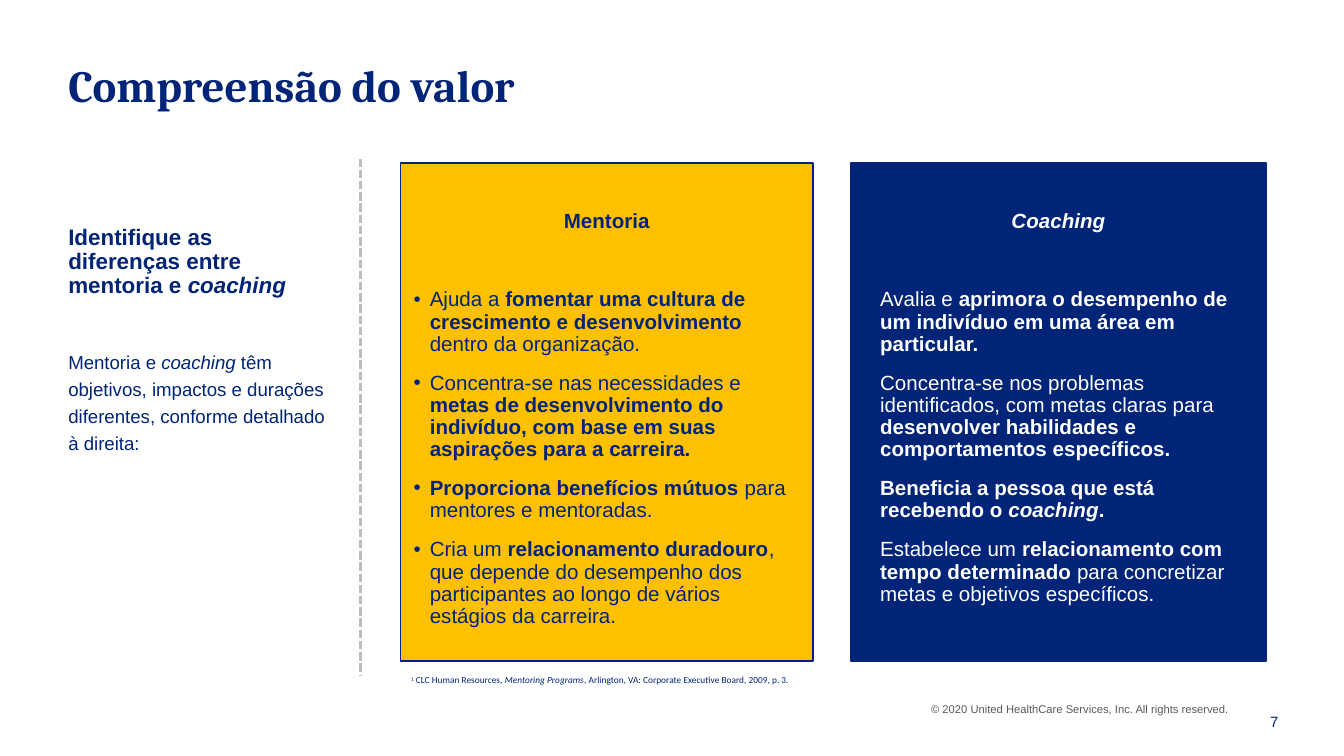
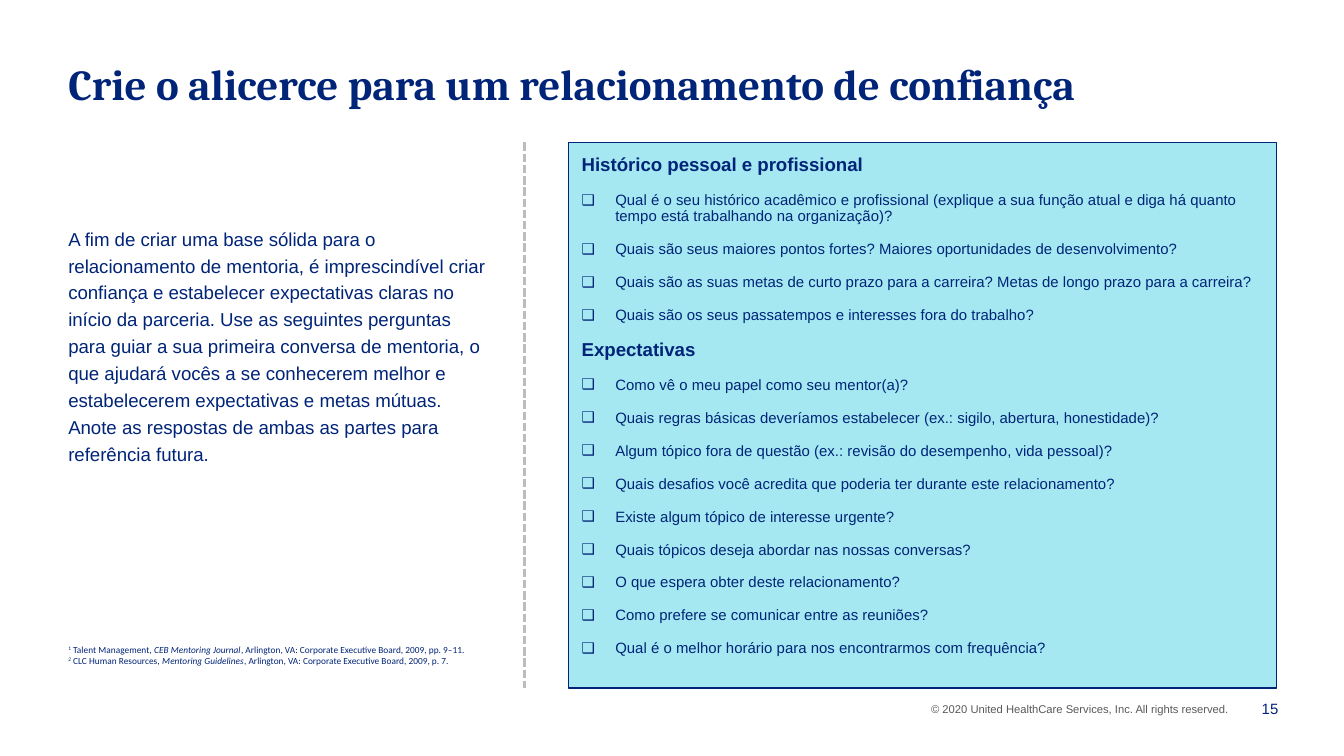
from dataclasses import dataclass

from lxml.etree import SubElement
from pptx import Presentation
from pptx.dml.color import RGBColor
from pptx.enum.dml import MSO_LINE
from pptx.enum.shapes import MSO_CONNECTOR, MSO_SHAPE
from pptx.enum.text import MSO_ANCHOR, MSO_AUTO_SIZE, PP_ALIGN
from pptx.oxml.ns import qn
from pptx.util import Inches, Pt


@dataclass(frozen=True)
class Theme:
    navy: str = "002477"
    gold: str = "FFC000"
    aqua: str = "A5E8F1"
    white: str = "FFFFFF"
    gray: str = "595959"
    divider: str = "BDBDBD"
    title_font: str = "Cambria"
    body_font: str = "Arial"
    note_font: str = "Calibri"
    lead_size: int = 12
    card_size: int = 11
    body_size: int = 10
    small_size: int = 8
    copyright_size: int = 6
    note_size: int = 5


theme = Theme()


def add_box(page, place, insets=(0.1, 0.05, 0.1, 0.05), fill=None, line_width=1, grow=False):
    """Add a text box, or an outlined rectangle when a fill is given."""
    place = [Inches(value) for value in place]
    if fill:
        box = page.shapes.add_shape(MSO_SHAPE.RECTANGLE, *place)
        box.shadow.inherit = False
        box.fill.solid()
        box.fill.fore_color.rgb = RGBColor.from_string(fill)
        box.line.color.rgb = RGBColor.from_string(theme.navy)
        box.line.width = Pt(line_width)
    else:
        box = page.shapes.add_textbox(*place)
    frame = box.text_frame
    frame.word_wrap = True
    frame.auto_size = MSO_AUTO_SIZE.SHAPE_TO_FIT_TEXT if grow else MSO_AUTO_SIZE.NONE
    frame.vertical_anchor = MSO_ANCHOR.TOP
    (frame.margin_left, frame.margin_top,
     frame.margin_right, frame.margin_bottom) = [Inches(value) for value in insets]
    return frame


def write(frame, spans, size, color=theme.navy, font=theme.body_font, align=PP_ALIGN.LEFT,
          spacing=1.0, before=0, after=0, indent=0, bullet=None):
    """Add a paragraph of (text, style) spans; style letters: b bold, i italic, s superscript."""
    first = not frame.paragraphs[0].runs
    para = frame.paragraphs[0] if first else frame.add_paragraph()
    if indent:
        properties = para._p.get_or_add_pPr()
        properties.set("marL", str(Inches(indent)))
        if bullet:
            properties.set("indent", str(-Inches(indent)))
            bullet_color = SubElement(properties, qn("a:buClr"))
            SubElement(bullet_color, qn("a:srgbClr")).set("val", color)
            SubElement(properties, qn("a:buFont")).set("typeface", font)
            SubElement(properties, qn("a:buChar")).set("char", bullet)
    para.alignment = align
    para.line_spacing = spacing
    para.space_before = Pt(0 if first else before)
    para.space_after = Pt(after)
    for text, style in spans:
        span = para.add_run()
        span.text = text
        span.font.name = font
        span.font.size = Pt(size)
        span.font.color.rgb = RGBColor.from_string(color)
        span.font.bold = "b" in style
        span.font.italic = "i" in style
        if "s" in style:
            span.font._element.set("baseline", "30000")


deck = Presentation()
deck.slide_width = Inches(10)
deck.slide_height = deck.slide_width * 9 // 16

# Title, title size, number, number top, divider (x, top, bottom), note place, notes
page_specs = [
    ("Compreensão do valor", 24, "7", 5.21, (2.68, 1.18, 5.02), (2.96, 5.02, 6.55, 0.08),
     [("1", " CLC Human Resources, ", "Mentoring Programs",
       ", Arlington, VA: Corporate Executive Board, 2009, p. 3.")]),
    ("Crie o alicerce para um relacionamento de confiança", 23, "15", 5.12,
     (3.9, 1.06, 5.12), (0.41, 4.79, 4.32, 0.17),
     [("1", " Talent Management, ", "CEB Mentoring Journal",
       ", Arlington, VA: Corporate Executive Board, 2009, pp. 9–11."),
      ("2", " CLC Human Resources, ", "Mentoring Guidelines",
       ", Arlington, VA: Corporate Executive Board, 2009, p. 7.")]),
]

pages = []
for title, title_size, number, number_top, (x, top, bottom), note_place, notes in page_specs:
    page = deck.slides.add_slide(deck.slide_layouts[6])
    pages.append(page)

    write(add_box(page, (6.83, 5.18, 2.58, 0.2), grow=True),
          [("© 2020 United HealthCare Services, Inc. All rights reserved.", "")],
          theme.copyright_size, theme.gray)
    write(add_box(page, (0.41, 0.38, 9.1, 0.6)), [(title, "b")], title_size,
          font=theme.title_font)
    number_frame = add_box(page, (9.22, number_top, 0.39, 0.31))
    number_frame.vertical_anchor = MSO_ANCHOR.MIDDLE
    write(number_frame, [(number, "")], theme.small_size, align=PP_ALIGN.RIGHT)

    divider = page.shapes.add_connector(
        MSO_CONNECTOR.STRAIGHT, Inches(x), Inches(top), Inches(x), Inches(bottom))
    divider.line.color.rgb = RGBColor.from_string(theme.divider)
    divider.line.width = Pt(1.5)
    divider.line.dash_style = MSO_LINE.SQUARE_DOT
    SubElement(divider._element.spPr, qn("a:effectLst"))

    note_frame = add_box(page, note_place, (0.1, 0, 0.1, 0), grow=True)
    for mark, author, work, publisher in notes:
        write(note_frame, [(mark, "s"), (author, ""), (work, "i"), (publisher, "")],
              theme.note_size, font=theme.note_font)

value_page, trust_page = pages

# Mentoring and coaching compared
intro = add_box(value_page, (0.41, 1.31, 2.12, 3.71), (0.1, 0.37, 0.1, 0.05))
write(intro, [("Identifique as diferenças entre mentoria e ", "b"), ("coaching", "bi")],
      theme.lead_size, spacing=0.9, after=25)
write(intro, [("Mentoria e ", ""), ("coaching ", "i"),
              ("têm objetivos, impactos e durações diferentes, conforme detalhado à direita:", "")],
      theme.body_size, spacing=1.2, before=1, after=1)

cards = [
    (2.98, 3.07, theme.gold, theme.navy, "•", ("Mentoria", "b"), [
        [("Ajuda a ", ""), ("fomentar uma cultura de crescimento e desenvolvimento", "b"),
         (" dentro da organização.", "")],
        [("Concentra-se nas necessidades e ", ""),
         ("metas de desenvolvimento do indivíduo, com base em suas aspirações "
          "para a carreira.", "b")],
        [("Proporciona benefícios mútuos", "b"), (" para mentores e mentoradas.", "")],
        [("Cria um ", ""), ("relacionamento duradouro", "b"),
         (", que depende do desempenho dos participantes ao longo de vários "
          "estágios da carreira.", "")],
    ]),
    (6.33, 3.09, theme.navy, theme.white, None, ("Coaching", "bi"), [
        [("Avalia e ", ""),
         ("aprimora o desempenho de um indivíduo em uma área em particular.", "b")],
        [("Concentra-se nos problemas identificados, com metas claras para ", ""),
         ("desenvolver habilidades e comportamentos específicos.", "b")],
        [("Beneficia a pessoa que está recebendo o ", "b"), ("coaching", "bi"), (".", "b")],
        [("Estabelece um ", ""), ("relacionamento com tempo determinado", "b"),
         (" para concretizar metas e objetivos específicos.", "")],
    ]),
]
for left, width, fill, color, bullet, heading, points in cards:
    card = add_box(value_page, (left, 1.21, width, 3.71), (0.1, 0.36, 0.1, 0.05), fill)
    write(card, [heading], theme.card_size, color, align=PP_ALIGN.CENTER,
          spacing=0.9, after=27)
    for point in points:
        write(card, point, theme.card_size, color, spacing=0.9, before=3, after=6,
              indent=0.12, bullet=bullet)

# Questions for the first conversation
guidance = add_box(trust_page, (0.41, 1.66, 3.33, 1.82), (0.1, 0, 0.1, 0), grow=True)
write(guidance, [(
    "A fim de criar uma base sólida para o relacionamento de mentoria, é imprescindível criar "
    "confiança e estabelecer expectativas claras no início da parceria. Use as seguintes "
    "perguntas para guiar a sua primeira conversa de mentoria, o que ajudará vocês a se "
    "conhecerem melhor e estabelecerem expectativas e metas mútuas. Anote as respostas de "
    "ambas as partes para referência futura.", "")],
    theme.body_size, spacing=1.2, after=6)

question_groups = {
    "Histórico pessoal e profissional": [
        "Qual é o seu histórico acadêmico e profissional (explique a sua função atual e diga "
        "há quanto tempo está trabalhando na organização)?",
        "Quais são seus maiores pontos fortes? Maiores oportunidades de desenvolvimento?",
        "Quais são as suas metas de curto prazo para a carreira? Metas de longo prazo para "
        "a carreira?",
        "Quais são os seus passatempos e interesses fora do trabalho?",
    ],
    "Expectativas": [
        "Como vê o meu papel como seu mentor(a)?",
        "Quais regras básicas deveríamos estabelecer (ex.: sigilo, abertura, honestidade)?",
        "Algum tópico fora de questão (ex.: revisão do desempenho, vida pessoal)?",
        "Quais desafios você acredita que poderia ter durante este relacionamento?",
        "Existe algum tópico de interesse urgente?",
        "Quais tópicos deseja abordar nas nossas conversas?",
        "O que espera obter deste relacionamento?",
        "Como prefere se comunicar entre as reuniões?",
        "Qual é o melhor horário para nos encontrarmos com frequência?",
    ],
}
checklist = add_box(trust_page, (4.23, 1.06, 5.27, 4.06), (0.1, 0.1, 0.1, 0.1),
                    theme.aqua, 0.75, grow=True)
for heading, questions in question_groups.items():
    write(checklist, [(heading, "b")], theme.body_size, spacing=0.9, before=3, after=6)
    for question in questions:
        write(checklist, [(question, "")], theme.small_size, spacing=0.9, before=3, after=6,
              indent=0.25, bullet="❑")

deck.save("out.pptx")
